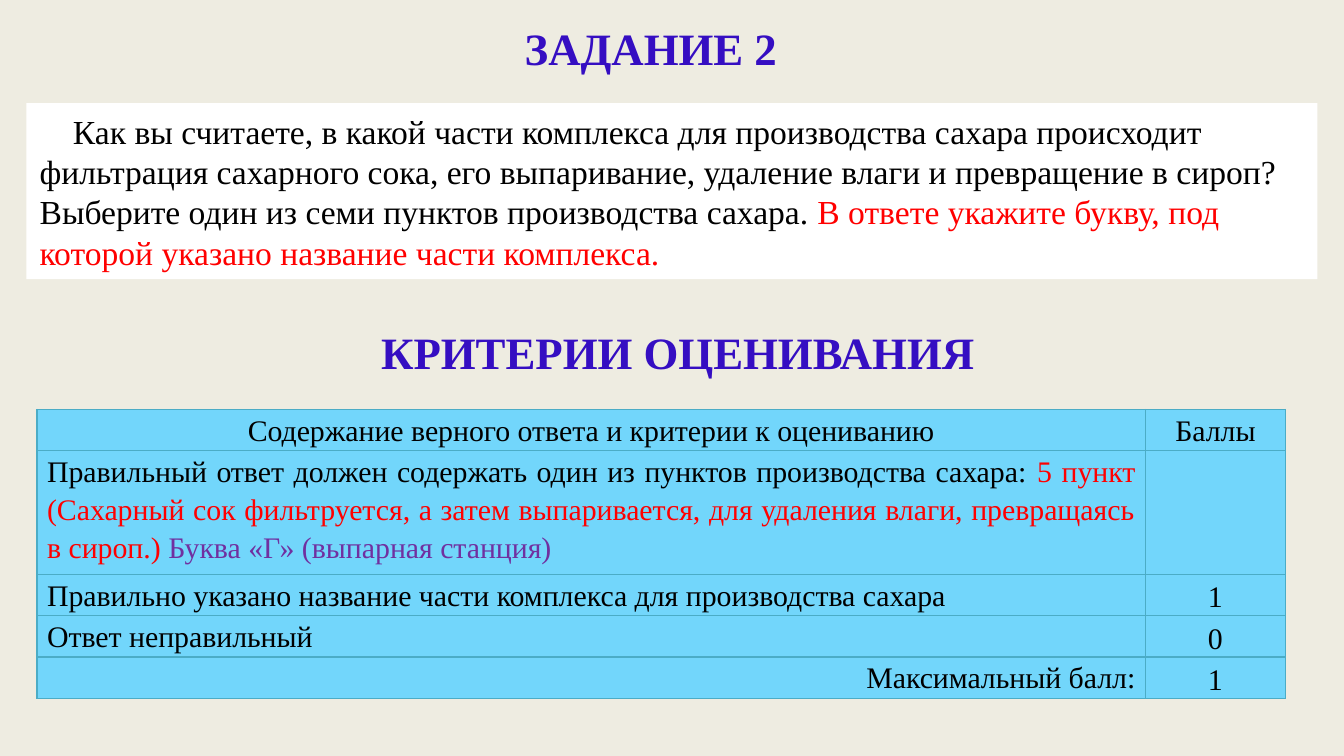
from lxml import etree
from pptx import Presentation
from pptx.dml.color import RGBColor
from pptx.enum import shapes, text
from pptx.oxml import ns
from pptx.util import Cm, Pt

FONT = "Times New Roman"
HUES = {"back": "EEECE1", "head": "350EC2", "paper": "FFFFFF", "ink": "000000",
        "red": "FF0000", "plum": "7030A0", "cell": "72D6FB", "edge": "4BACC6"}
LEFT, MID, RIGHT, FULL = (text.PP_ALIGN.LEFT, text.PP_ALIGN.CENTER,
                          text.PP_ALIGN.RIGHT, text.PP_ALIGN.JUSTIFY)

HEADS = ["ЗАДАНИЕ 2", "КРИТЕРИИ ОЦЕНИВАНИЯ"]
TASK = [
    ("Как вы считаете, в какой части комплекса для производства сахара происходит "
     "фильтрация сахарного сока, его выпаривание, удаление влаги и превращение в сироп? "
     "Выберите один из семи пунктов производства сахара. ", "ink"),
    ("В ответе укажите букву, под которой указано название части комплекса.", "red"),
]
ANSWER = [
    ("Правильный ответ должен содержать один из пунктов производства сахара: ", "ink"),
    ("5 пункт (Сахарный сок фильтруется, а затем выпаривается, для удаления влаги, "
     "превращаясь в сироп.) ", "red"),
    ("Буква «Г» (выпарная станция)", "plum"),
]
ROWS = [
    (MID, [("Содержание верного ответа и критерии к оцениванию", "ink")], "Баллы"),
    (FULL, ANSWER, ""),
    (FULL, [("Правильно указано название части комплекса для производства сахара", "ink")], "1"),
    (FULL, [("Ответ неправильный", "ink")], "0"),
    (RIGHT, [("Максимальный балл:", "ink")], "1"),
]
WIDTHS = [20.95, 2.64]
LOW, TALL = 0.78, 2.34


def rgb(hue):
    return RGBColor.from_string(HUES[hue])


def paint(item, hue):
    item.fill.solid()
    item.fill.fore_color.rgb = rgb(hue)


def write(frame, runs, size, align, bold=False):
    para = frame.paragraphs[0]
    para.alignment = align
    para.font.size = Pt(size)
    for words, hue in runs:
        run = para.add_run()
        run.text = words
        run.font.name = FONT
        run.font.size = Pt(size)
        run.font.bold = bold
        run.font.color.rgb = rgb(hue)
    return para


def place(shape, left, top, width, height):
    shape.left, shape.top = Cm(left), Cm(top)
    shape.width, shape.height = Cm(width), Cm(height)


def border(cell):
    props = cell._tc.get_or_add_tcPr()
    for spot, side in enumerate(("a:lnL", "a:lnR", "a:lnT", "a:lnB")):
        line = etree.Element(ns.qn(side), w=str(Pt(0.79)))
        fill = etree.SubElement(line, ns.qn("a:solidFill"))
        etree.SubElement(fill, ns.qn("a:srgbClr"), val=HUES["edge"])
        props.insert(spot, line)


def main():
    deck = Presentation()
    deck.slide_width, deck.slide_height = Cm(25.4), Cm(14.29)
    slide = deck.slides.add_slide(deck.slide_layouts[5])
    paint(slide.background, "back")

    title = slide.shapes.title
    label = slide.shapes.add_textbox(0, 0, 0, 0)
    for shape, words, left, top in zip((title, label), HEADS, (0, 0.51), (0, 5.75)):
        place(shape, left, top, 24.6, 1.8)
        frame = shape.text_frame
        frame.word_wrap = True
        frame.auto_size = text.MSO_AUTO_SIZE.NONE
        frame.vertical_anchor = text.MSO_ANCHOR.MIDDLE
        write(frame, [(words, "head")], 24, MID, True)

    task = slide.shapes.add_shape(shapes.MSO_SHAPE.RECTANGLE, 0, 0, 0, 0)
    place(task, 0.5, 1.95, 24.4, 3.33)
    task.shadow.inherit = False
    paint(task, "paper")
    task.line.fill.background()
    task.text_frame.word_wrap = True
    task.text_frame.vertical_anchor = text.MSO_ANCHOR.MIDDLE
    para = write(task.text_frame, TASK, 18, LEFT)
    para._p.get_or_add_pPr().set("indent", str(Cm(0.63)))

    grid = slide.shapes.add_table(len(ROWS), 2, Cm(0.7), Cm(7.74), Cm(sum(WIDTHS)),
                                  Cm(LOW * 4 + TALL)).table
    for col, width in zip(grid.columns, WIDTHS):
        col.width = Cm(width)
    for num, (align, runs, mark) in enumerate(ROWS):
        grid.rows[num].height = Cm(TALL if runs is ANSWER else LOW)
        score = [(mark, "ink")] if mark else []
        for col, (words, side) in enumerate([(runs, align), (score, MID)]):
            cell = grid.cell(num, col)
            cell.margin_left = cell.margin_right = Cm(0.19)
            cell.margin_top = cell.margin_bottom = 0
            if col and num:
                cell.vertical_anchor = text.MSO_ANCHOR.MIDDLE
            paint(cell, "cell")
            border(cell)
            write(cell.text_frame, words, 16, side).line_spacing = 1.15

    deck.save("out.pptx")


if __name__ == "__main__":
    main()
